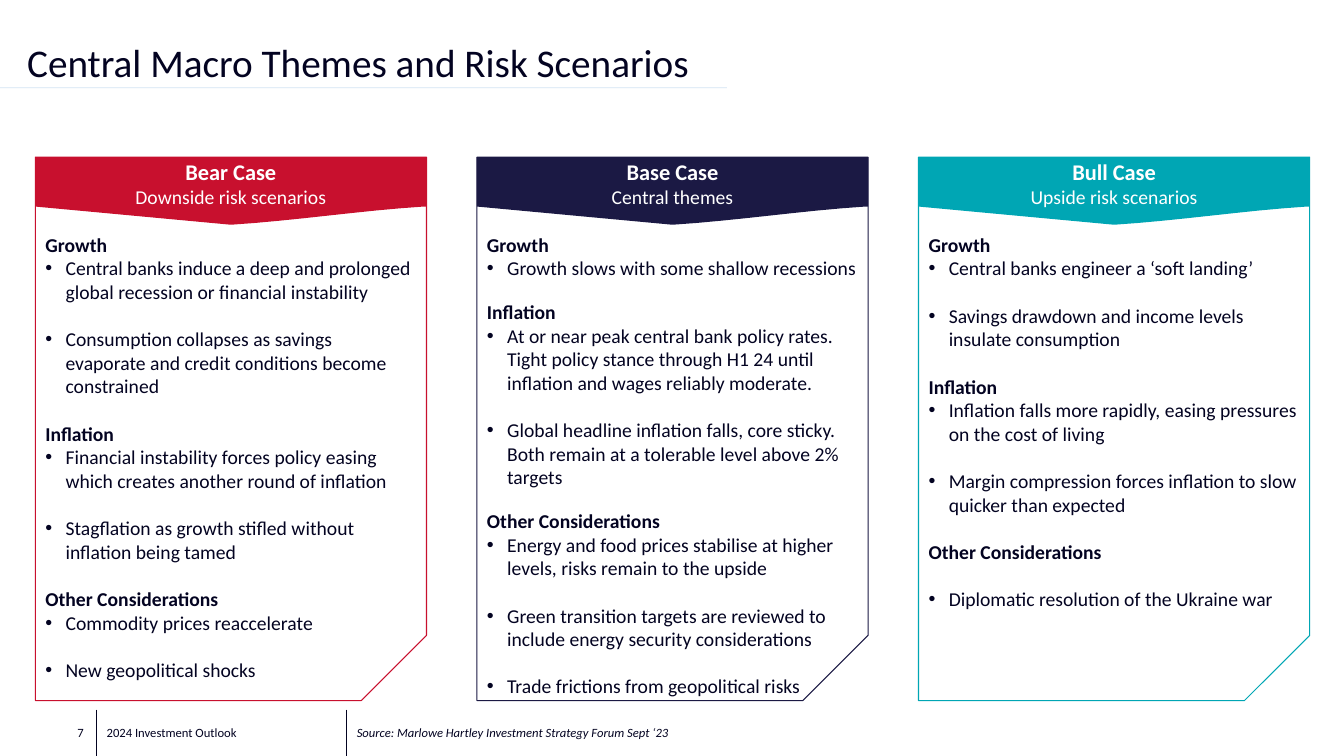
from lxml.etree import SubElement
from pptx import Presentation
from pptx.dml.color import RGBColor
from pptx.enum.shapes import MSO_CONNECTOR, MSO_SHAPE
from pptx.enum.text import MSO_ANCHOR as Anchor, MSO_AUTO_SIZE as AutoSize, PP_ALIGN as Align
from pptx.oxml.ns import qn
from pptx.util import Emu, Pt

INK = "030321"
WHITE = "FFFFFF"
FONT = "Calibri"
CARD_LEFT, CARD_TOP, CARD_WIDTH, CARD_HEIGHT, CARD_PITCH = 35, 156, 388, 539, 438
BANNER_EDGE, BANNER_TIP = 49, 67
LINE_GAP, SMALL_GAP = 17, 14.5

CASES = [
    ("Bear Case", "Downside risk scenarios", "C8102E", 434, LINE_GAP, 0, [
        ("Growth", [
            "Central banks induce a deep and prolonged global recession or financial instability",
            "Consumption collapses as savings evaporate and credit conditions become constrained"]),
        ("Inflation", [
            "Financial instability forces policy easing which creates another round of inflation",
            "Stagflation as growth stifled without inflation being tamed"]),
        ("Other Considerations", [
            "Commodity prices reaccelerate",
            "New geopolitical shocks"]),
    ]),
    ("Base Case", "Central themes", "1B1944", 475, SMALL_GAP, 0, [
        ("Growth", ["Growth slows with some shallow recessions"]),
        ("Inflation", [
            "At or near peak central bank policy rates. Tight policy stance through H1 24 "
            "until inflation and wages reliably moderate.",
            "Global headline inflation falls, core sticky. Both remain at a tolerable level "
            "above 2% targets"]),
        ("Other Considerations", [
            "Energy and food prices stabilise at higher levels, risks remain to the upside",
            "Green transition targets are reviewed to include energy security considerations",
            "Trade frictions from geopolitical risks"]),
    ]),
    ("Bull Case", "Upside risk scenarios", "00A6B4", 387, LINE_GAP, LINE_GAP, [
        ("Growth", [
            "Central banks engineer a ‘soft landing’",
            "Savings drawdown and income levels insulate consumption"]),
        ("Inflation", [
            "Inflation falls more rapidly, easing pressures on the cost of living",
            "Margin compression forces inflation to slow quicker than expected"]),
        ("Other Considerations", ["Diplomatic resolution of the Ukraine war"]),
    ]),
]


def px(length):
    """Turn px, a hundred to the inch, into EMU."""
    return Emu(round(length * 9144))


def rgb(code):
    """Turn a hex string into a colour."""
    return RGBColor.from_string(code)


def place(item, left, top, width, height):
    """Move and size a shape in px."""
    item.left, item.top, item.width, item.height = map(px, (left, top, width, height))


def prepare(frame, anchor):
    """Make a text frame wrap at a fixed size and anchor."""
    frame.word_wrap = True
    frame.auto_size = AutoSize.NONE
    frame.vertical_anchor = anchor


def write(paragraph, text, size, color=INK, bold=False, italic=False, align=Align.LEFT):
    """Fill a paragraph and set its font."""
    paragraph.text = text
    paragraph.alignment = align
    font = paragraph.font
    font.name, font.size, font.bold, font.italic = FONT, Pt(size), bold, italic
    font.color.rgb = rgb(color)


def next_paragraph(frame, is_first):
    """Return the opening paragraph of a frame or add one."""
    return frame.paragraphs[0] if is_first else frame.add_paragraph()


def set_bullet(paragraph, shown):
    """Give a paragraph a hanging bullet or none."""
    properties = paragraph._p.get_or_add_pPr()
    properties.set("marL", str(px(20) if shown else 0))
    properties.set("indent", str(px(-20) if shown else 0))
    if shown:
        SubElement(properties, qn("a:buFont")).set("typeface", "Arial")
        SubElement(properties, qn("a:buChar")).set("char", "•")
    else:
        SubElement(properties, qn("a:buNone"))


def add_rule(slide, start, end, color, alpha=None):
    """Draw a thin straight line between two points."""
    rule = slide.shapes.add_connector(MSO_CONNECTOR.STRAIGHT, *map(px, start + end))
    rule.line.width = Pt(0.5)
    rule.line.color.rgb = rgb(color)
    SubElement(rule._element.spPr, qn("a:effectLst"))
    if alpha:
        tint = rule._element.spPr.find(".//" + qn("a:srgbClr"))
        SubElement(tint, qn("a:alpha")).set("val", str(alpha * 1000))


def add_title(slide, text, left, top, width, height):
    """Place the title and the pale rule under it."""
    add_rule(slide, (0, 87), (721, 87), "A8CAE9", 50)
    title = slide.shapes.title
    place(title, left, top, width, height)
    prepare(title.text_frame, Anchor.BOTTOM)
    heading = title.text_frame.paragraphs[0]
    write(heading, text, 28)
    heading.line_spacing = 0.8


def add_outline(slide, color, left, top, width, height):
    """Draw a card frame with its lower right corner cut."""
    outline = slide.shapes.add_shape(
        MSO_SHAPE.SNIP_1_RECTANGLE, *map(px, (left, top, width, height)))
    outline._element.spPr.xfrm.set("flipV", "1")
    outline.shadow.inherit = False
    outline.fill.background()
    outline.line.color.rgb = rgb(color)
    outline.line.width = Pt(0.75)


def banner_edge(width, steps=8):
    """Return the points of the curved right half of a banner's lower edge."""
    curve = ((width - 3, BANNER_EDGE), (width - 66, 53), (width - 130, 63), (width / 2, BANNER_TIP))
    points = []
    for step in range(steps + 1):
        t = step / steps
        weights = ((1 - t) ** 3, 3 * t * (1 - t) ** 2, 3 * t ** 2 * (1 - t), t ** 3)
        points.append(tuple(sum(w * p[axis] for w, p in zip(weights, curve)) for axis in (0, 1)))
    return points


def add_banner(slide, name, subtitle, color, left, top, width):
    """Draw a pointed banner with the case name and subtitle."""
    corners = [(width, 0), (width, BANNER_EDGE), *banner_edge(width), (0, BANNER_EDGE)]
    builder = slide.shapes.build_freeform(0, 0)
    builder.add_line_segments([(px(x), px(y)) for x, y in corners], close=True)
    banner = builder.convert_to_shape(px(left), px(top))
    banner.shadow.inherit = False
    banner.fill.solid()
    banner.fill.fore_color.rgb = rgb(color)
    banner.line.fill.background()
    frame = banner.text_frame
    prepare(frame, Anchor.MIDDLE)
    frame.margin_left = frame.margin_right = px(10)
    frame.margin_top, frame.margin_bottom = 0, px(16)
    write(frame.paragraphs[0], name, 16, WHITE, bold=True, align=Align.CENTER)
    write(frame.add_paragraph(), subtitle, 14, WHITE, align=Align.CENTER)


def fill_themes(body, sections, section_gap, last_gap, left, top, width, height):
    """List the themes of a case under bold headings."""
    place(body, left, top, width, height)
    frame = body.text_frame
    prepare(frame, Anchor.TOP)
    for number, (heading, points) in enumerate(sections):
        theme = next_paragraph(frame, number == 0)
        set_bullet(theme, False)
        theme.space_before = Pt(section_gap if number else 0)
        write(theme, heading, 14, bold=True)
        first_gap = last_gap if number == len(sections) - 1 else 0
        for order, text in enumerate(points):
            point = frame.add_paragraph()
            set_bullet(point, True)
            point.space_before = Pt(LINE_GAP if order else first_gap)
            write(point, text, 14)


def add_case(slide, body, case, left, top, width, height):
    """Build one scenario card in its box."""
    name, subtitle, color, list_height, section_gap, last_gap, sections = case
    add_outline(slide, color, left, top, width, height)
    add_banner(slide, name, subtitle, color, left, top, width)
    fill_themes(body, sections, section_gap, last_gap, left, top + 70, width, list_height)


def add_footer(slide, top, height):
    """Write the page number, deck name and source between dividers."""
    entries = [
        (29, 64, "7", Align.RIGHT, False),
        (96, 249, "2024 Investment Outlook", Align.LEFT, False),
        (344, 989, "Source: Marlowe Hartley Investment Strategy Forum Sept ‘23", Align.LEFT, True),
    ]
    for left, width, text, align, italic in entries:
        entry = slide.shapes.add_textbox(*map(px, (left, top, width, height)))
        prepare(entry.text_frame, Anchor.MIDDLE)
        write(entry.text_frame.paragraphs[0], text, 9, italic=italic, align=align)
    for divider in (96, 344):
        add_rule(slide, (divider, top), (divider, top + height), INK)


def main():
    """Build and save the slide."""
    deck = Presentation()
    deck.slide_width, deck.slide_height = px(1333), px(750)
    slide = deck.slides.add_slide(deck.slide_layouts[4])
    _, *bodies, spare = slide.placeholders
    spare._element.getparent().remove(spare._element)
    add_title(slide, "Central Macro Themes and Risk Scenarios", 17, 38, 1000, 51)
    for column, (body, case) in enumerate(zip(bodies, CASES)):
        left = CARD_LEFT + column * CARD_PITCH
        add_case(slide, body, case, left, CARD_TOP, CARD_WIDTH, CARD_HEIGHT)
    add_footer(slide, 704, 46)
    deck.save("out.pptx")


if __name__ == "__main__":
    main()
